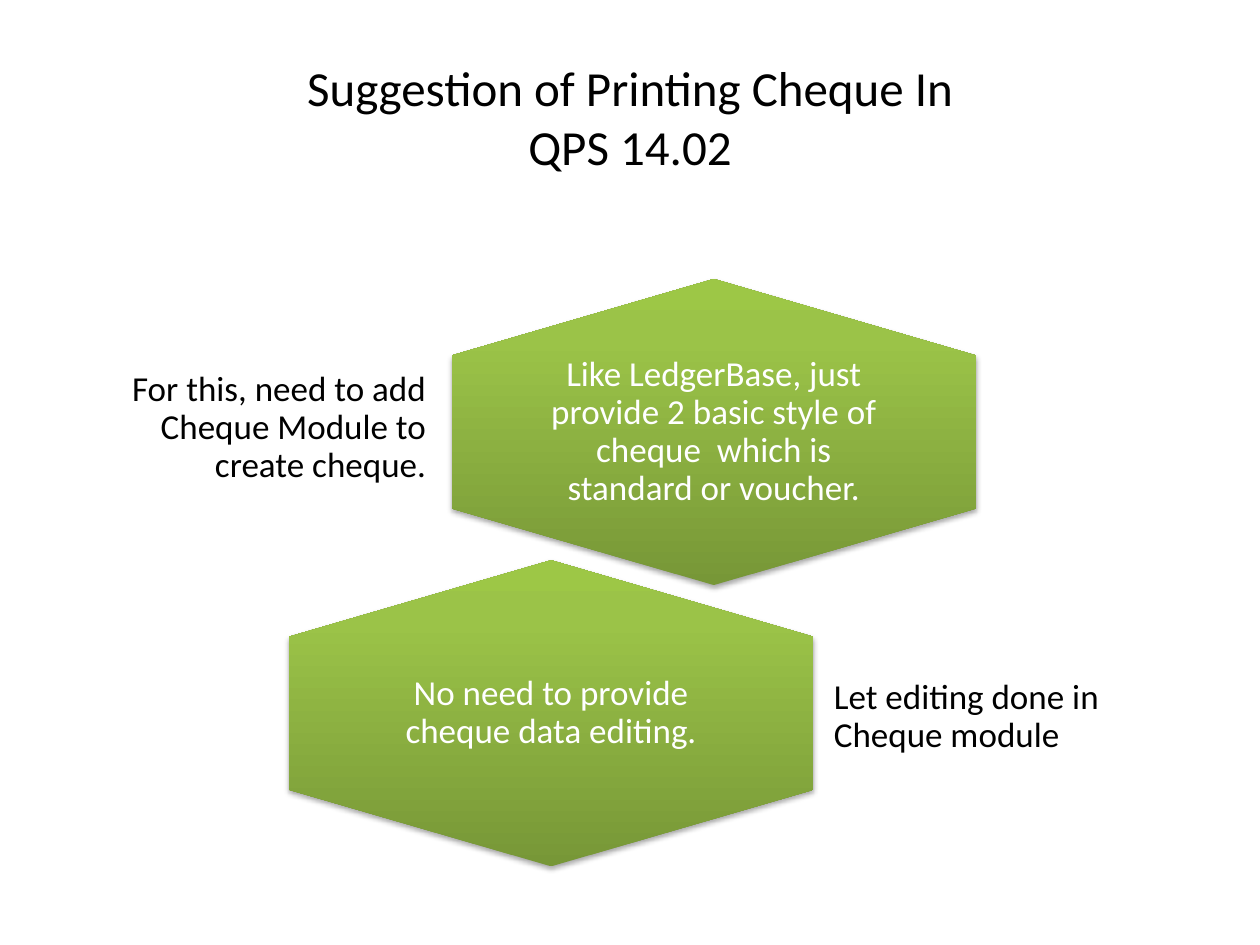
"""Build the cheque printing suggestion slide with two labelled hexagons."""
from dataclasses import dataclass

from lxml.etree import fromstring
from pptx import Presentation
from pptx.dml.color import RGBColor
from pptx.enum.shapes import MSO_SHAPE
from pptx.enum.text import MSO_ANCHOR, MSO_AUTO_SIZE, PP_ALIGN
from pptx.util import Cm, Pt


@dataclass(frozen=True)
class Theme:
    font: str = "Calibri"
    title_size: int = 28
    body_size: int = 20
    dark_text: str = "000000"
    light_text: str = "FFFFFF"
    shadow: str = "000000"
    gradient: tuple = ((0, "779737"), (80, "9BC348"), (100, "9DC746"))


theme = Theme()
NAMESPACE = 'xmlns:a="http://schemas.openxmlformats.org/drawingml/2006/main"'
HEXAGON_WIDTH, HEXAGON_HEIGHT = 6.17, 10.62
CAPTION_WIDTH, CAPTION_HEIGHT = 7.09, 4.11
NOTE_HEIGHT = 3.71


def add_run(paragraph, text, size, color):
    run = paragraph.add_run()
    run.text = text
    run.font.name = theme.font
    run.font.size = Pt(size)
    run.font.color.rgb = RGBColor.from_string(color)


def add_label(slide, left, top, width, height, text, color, alignment):
    label = slide.shapes.add_textbox(Cm(left), Cm(top), Cm(width), Cm(height))
    frame = label.text_frame
    frame.word_wrap = True
    frame.vertical_anchor = MSO_ANCHOR.MIDDLE
    frame.margin_left = frame.margin_right = Cm(0.2)
    frame.margin_top = frame.margin_bottom = Cm(0.2)
    paragraph = frame.paragraphs[0]
    paragraph.alignment = alignment
    paragraph.line_spacing = 0.9
    add_run(paragraph, text, theme.body_size, color)


presentation = Presentation()
presentation.slide_width = Cm(25.4)
presentation.slide_height = Cm(19.05)
slide = presentation.slides.add_slide(presentation.slide_layouts[5])

title = slide.shapes.title
title.left, title.top, title.width, title.height = Cm(1.27), Cm(0.76), Cm(22.86), Cm(3.18)
title.text_frame.auto_size = MSO_AUTO_SIZE.NONE
title.text_frame.vertical_anchor = MSO_ANCHOR.MIDDLE
paragraph = title.text_frame.paragraphs[0]
paragraph.alignment = PP_ALIGN.CENTER
add_run(paragraph, "Suggestion of Printing Cheque In", theme.title_size, theme.dark_text)
paragraph.add_line_break()
add_run(paragraph, "QPS 14.02", theme.title_size, theme.dark_text)

stops = "".join(
    f'<a:gs pos="{position * 1000}"><a:srgbClr val="{color}"/></a:gs>'
    for position, color in theme.gradient
)
gradient_xml = (
    f'<a:gradFill {NAMESPACE} rotWithShape="0"><a:gsLst>{stops}</a:gsLst>'
    '<a:lin ang="16200000" scaled="0"/></a:gradFill>'
)
shadow_xml = (
    f'<a:outerShdw {NAMESPACE} blurRad="{Pt(3.1)}" dist="{Pt(1.8)}" dir="5400000" rotWithShape="0">'
    f'<a:srgbClr val="{theme.shadow}"><a:alpha val="35000"/></a:srgbClr></a:outerShdw>'
)

suggestions = [
    (14.39, 8.71, "Like LedgerBase, just provide 2 basic style of cheque  which is standard or voucher.",
     1.91, 6.78, 6.88, "For this, need to add Cheque Module to create cheque.", PP_ALIGN.RIGHT),
    (11.11, 14.38, "No need to provide cheque data editing.",
     16.61, 12.6, 6.65, "Let editing done in Cheque module", PP_ALIGN.LEFT),
]
for center_x, center_y, caption, note_left, note_top, note_width, note, note_alignment in suggestions:
    hexagon = slide.shapes.add_shape(
        MSO_SHAPE.HEXAGON,
        Cm(center_x - HEXAGON_WIDTH / 2), Cm(center_y - HEXAGON_HEIGHT / 2),
        Cm(HEXAGON_WIDTH), Cm(HEXAGON_HEIGHT),
    )
    hexagon.rotation = 90
    hexagon.adjustments[0] = 0.25
    hexagon.adjustments[1] = 1.15
    hexagon.line.fill.background()
    hexagon.shadow.inherit = False
    properties = hexagon.element.spPr
    properties.find("{*}prstGeom").addnext(fromstring(gradient_xml))
    properties.find("{*}effectLst").append(fromstring(shadow_xml))

    add_label(slide, center_x - CAPTION_WIDTH / 2, center_y - CAPTION_HEIGHT / 2,
              CAPTION_WIDTH, CAPTION_HEIGHT, caption, theme.light_text, PP_ALIGN.CENTER)
    add_label(slide, note_left, note_top, note_width, NOTE_HEIGHT,
              note, theme.dark_text, note_alignment)

presentation.save("out.pptx")
